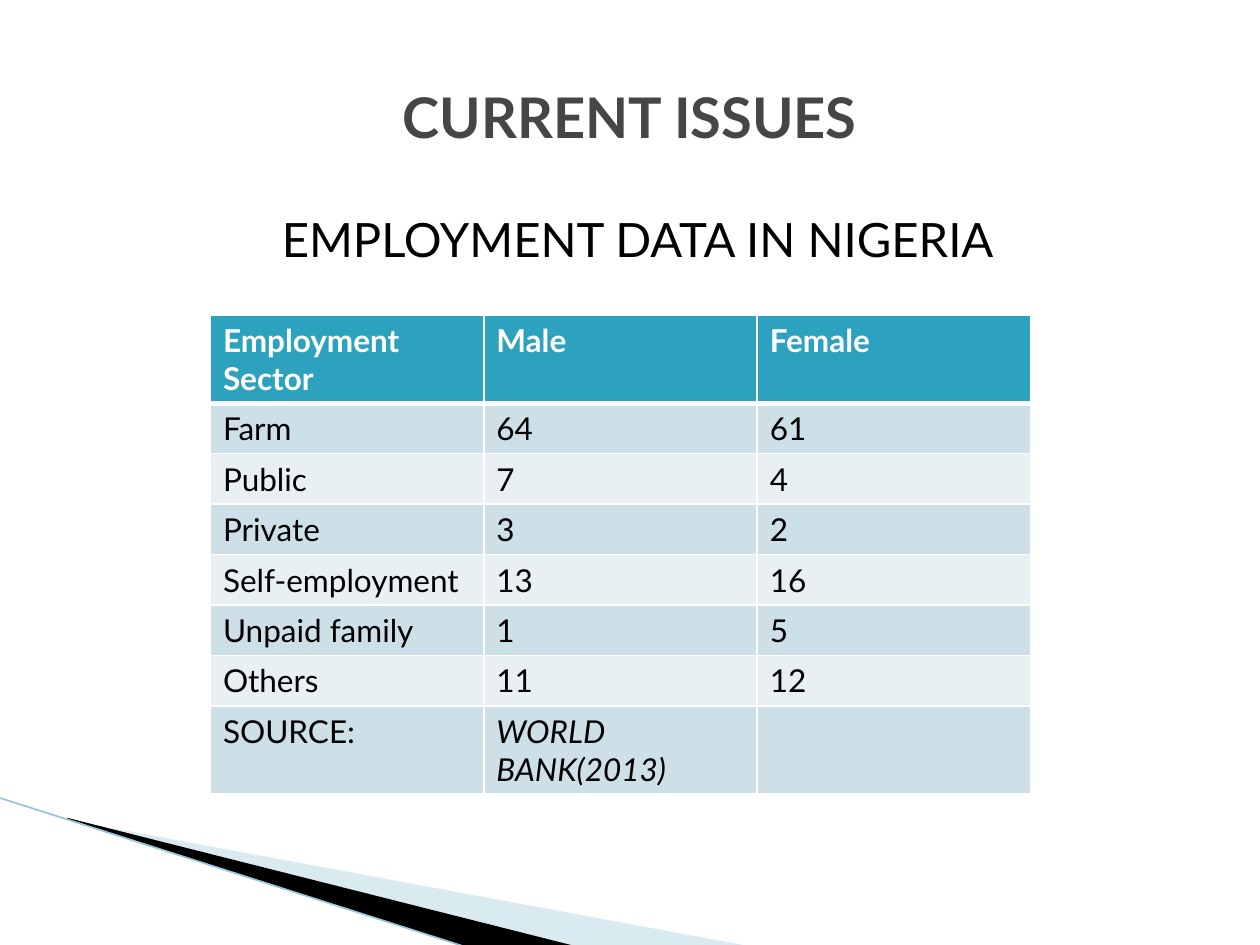
from dataclasses import dataclass

from lxml import etree
from pptx import Presentation
from pptx.dml.color import RGBColor
from pptx.enum.shapes import MSO_CONNECTOR
from pptx.enum.text import MSO_ANCHOR, PP_ALIGN
from pptx.oxml.ns import qn
from pptx.util import Pt

PX = 9144  # 100 px to the inch
CENTER, LEFT = PP_ALIGN.CENTER, PP_ALIGN.LEFT
MIDDLE = MSO_ANCHOR.MIDDLE
STRAIGHT = MSO_CONNECTOR.STRAIGHT


@dataclass
class Theme:
    font: str = "Lato"
    title: str = "464646"
    text: str = "000000"
    white: str = "FFFFFF"
    header: str = "2DA2BF"
    bands: tuple = ("CDE0E8", "E8F0F4")
    wedge: str = "A0CBDC"
    edge: str = "97C5D8"
    title_size: int = 32
    subtitle_size: int = 27
    table_size: int = 18


theme = Theme()


def write(tf, text, size, color=theme.text, bold=False, italic=False, align=LEFT):
    tf.word_wrap = True
    p = tf.paragraphs[0]
    p.alignment = align
    r = p.add_run()
    r.text = text
    r.font.name, r.font.size = theme.font, Pt(size)
    r.font.bold, r.font.italic = bold, italic
    r.font.color.rgb = RGBColor.from_string(color)


def set_borders(cell, bottom):
    """Draw white cell borders, 1 pt except for the bottom one."""
    tcPr = cell._tc.get_or_add_tcPr()
    widths = {"a:lnL": 1, "a:lnR": 1, "a:lnT": 1, "a:lnB": bottom}
    for i, (tag, width) in enumerate(widths.items()):
        ln = etree.Element(qn(tag), w=str(Pt(width)))
        fill = etree.SubElement(ln, qn("a:solidFill"))
        etree.SubElement(fill, qn("a:srgbClr"), val=theme.white)
        tcPr.insert(i, ln)


prs = Presentation()
prs.slide_width, prs.slide_height = 1000 * PX, 750 * PX
s = prs.slides.add_slide(prs.slide_layouts[5])

# Corner decoration
wedges = [
    ([(55, 651), (595, 751), (456, 751), (55, 650)], theme.wedge, 40),
    ([(53, 649), (457, 751), (372, 752), (54, 650)], theme.text, 100),
]
for points, color, opacity in wedges:
    builder = s.shapes.build_freeform(*points[0], scale=PX)
    builder.add_line_segments(points[1:], close=True)
    sp = builder.convert_to_shape()
    sp.shadow.inherit = False
    sp.fill.solid()
    sp.fill.fore_color.rgb = RGBColor.from_string(color)
    sp.line.fill.background()
    if opacity < 100:
        clr = sp._element.spPr.find(qn("a:solidFill"))[0]
        etree.SubElement(clr, qn("a:alpha"), val=str(opacity * 1000))

edge = s.shapes.add_connector(STRAIGHT, -1 * PX, 633 * PX, 371 * PX, 752 * PX)
edge.line.color.rgb = RGBColor.from_string(theme.edge)
edge.line.width = Pt(0.95)
etree.SubElement(edge._element.spPr, qn("a:effectLst"))

# Title and subtitle
title = s.shapes.title
title.left, title.top, title.width, title.height = 50 * PX, 30 * PX, 900 * PX, 125 * PX
title.text_frame.vertical_anchor = MIDDLE
write(title.text_frame, "CURRENT ISSUES", theme.title_size, theme.title,
      bold=True, align=CENTER)

subtitle = s.shapes.add_textbox(62 * PX, 162 * PX, 888 * PX, 60 * PX)
write(subtitle.text_frame, "EMPLOYMENT DATA IN NIGERIA", theme.subtitle_size,
      align=CENTER)

# Employment table
rows = [
    ("Employment Sector", "Male", "Female"),
    ("Farm", "64", "61"),
    ("Public", "7", "4"),
    ("Private", "3", "2"),
    ("Self-employment", "13", "16"),
    ("Unpaid family", "1", "5"),
    ("Others", "11", "12"),
    ("SOURCE:", "WORLD BANK(2013)", ""),
]
last = len(rows) - 1
table = s.shapes.add_table(len(rows), 3, 167 * PX, 250 * PX, 651 * PX, 378 * PX).table
table.horz_banding = False
for col in table.columns:
    col.width = 217 * PX
for i, values in enumerate(rows):
    is_header = i == 0
    table.rows[i].height = (69 if i in (0, last) else 40) * PX
    for j, value in enumerate(values):
        cell = table.cell(i, j)
        cell.fill.solid()
        cell.fill.fore_color.rgb = RGBColor.from_string(
            theme.header if is_header else theme.bands[(i - 1) % 2])
        set_borders(cell, bottom=3 if is_header else 1)
        if value:
            write(cell.text_frame, value, theme.table_size,
                  theme.white if is_header else theme.text,
                  bold=is_header, italic=i == last and j == 1)

prs.save("out.pptx")
